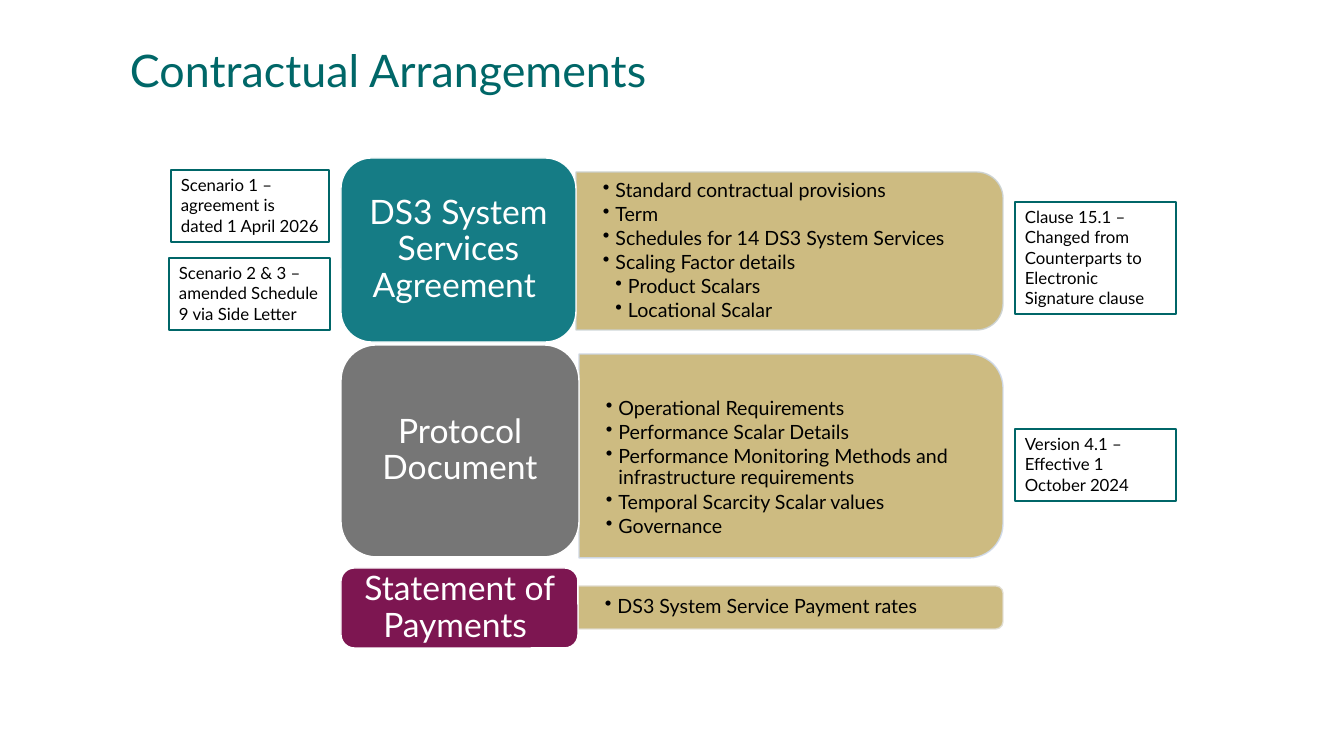
import dataclasses

import lxml.etree
import pptx
import pptx.dml.color
import pptx.enum.shapes
import pptx.enum.text
import pptx.oxml.ns
import pptx.util

PX = 9144000 / 1008
SHAPE = pptx.enum.shapes.MSO_SHAPE
ALIGN = pptx.enum.text.PP_ALIGN
ANCHOR = pptx.enum.text.MSO_ANCHOR
LABEL_LEFT = 341
PANEL_RIGHT = 1003


@dataclasses.dataclass(frozen=True)
class Theme:
    font: str = "Lato"
    title: str = "006768"
    text: str = "000000"
    paper: str = "FFFFFF"
    note_line: str = "006668"
    panel: str = "C8B474"
    agreement: str = "157C85"
    protocol: str = "767676"
    payments: str = "7D1651"
    title_size: int = 32
    label_size: int = 24
    bullet_size: int = 14
    note_size: int = 12


THEME = Theme()


def px(value):
    return pptx.util.Emu(round(value * PX))


def rgb(value):
    return pptx.dml.color.RGBColor.from_string(value)


def set_font(para, size, color):
    para.font.name = THEME.font
    para.font.size = pptx.util.Pt(size)
    para.font.color.rgb = rgb(color)


def add_box(page, kind, rect, fill, line):
    box = page.shapes.add_shape(kind, *map(px, rect))
    box.shadow.inherit = False
    box.fill.solid()
    box.fill.fore_color.rgb = rgb(fill)
    box.line.color.rgb = rgb(line)
    box.line.width = pptx.util.Pt(1)
    return box


def add_text_box(page, rect, side_inset=0):
    box = page.shapes.add_textbox(*map(px, rect))
    frame = box.text_frame
    frame.word_wrap = True
    frame.margin_left = frame.margin_right = px(side_inset)
    frame.margin_top = frame.margin_bottom = 0
    return frame


def add_title(page, text):
    para = add_text_box(page, (130, 49, 946, 106)).paragraphs[0]
    para.text = text
    para.line_spacing = 0.9
    set_font(para, THEME.title_size, THEME.title)


def add_label(page, top, width, height, text, fill):
    rect = (LABEL_LEFT, top, width, height)
    box = add_box(page, SHAPE.ROUNDED_RECTANGLE, rect, fill, THEME.paper)
    box.text_frame.vertical_anchor = ANCHOR.MIDDLE
    para = box.text_frame.paragraphs[0]
    para.text = text
    para.alignment = ALIGN.CENTER
    para.line_spacing = 0.9
    set_font(para, THEME.label_size, THEME.paper)


def add_panel(page, left, top, height, line):
    width = PANEL_RIGHT - left
    turned = (left + (width - height) / 2, top + (height - width) / 2, height, width)
    box = add_box(page, SHAPE.ROUND_2_SAME_RECTANGLE, turned, THEME.panel, line)
    box.rotation = 90
    for color in box.element.spPr.iter(pptx.oxml.ns.qn("a:srgbClr")):
        lxml.etree.SubElement(color, pptx.oxml.ns.qn("a:alpha"), val="90000")


def add_bullets(page, left, top, height, items):
    frame = add_text_box(page, (left, top, PANEL_RIGHT - left, height), 27)
    frame.vertical_anchor = ANCHOR.MIDDLE
    for index, (level, text) in enumerate(items):
        para = frame.add_paragraph() if index else frame.paragraphs[0]
        para.text = text
        para.level = level
        properties = para._p.get_or_add_pPr()
        properties.set("marL", str(px(12.5 * (level + 1))))
        properties.set("indent", str(-px(12.5)))
        lxml.etree.SubElement(properties, pptx.oxml.ns.qn("a:buChar"), char="•")
        para.line_spacing = 0.9
        para.space_after = pptx.util.Pt(2.1)
        set_font(para, THEME.bullet_size, THEME.text)


def add_note(page, rect, text):
    box = add_box(page, SHAPE.RECTANGLE, rect, THEME.paper, THEME.note_line)
    box.text_frame.vertical_anchor = ANCHOR.TOP
    para = box.text_frame.paragraphs[0]
    para.text = text
    para.alignment = ALIGN.LEFT
    set_font(para, THEME.note_size, THEME.text)


def add_row(page, label, panel, items, text_drop=0):
    top, height, text, fill = label
    panel_left, panel_top, panel_height, line = panel
    add_panel(page, panel_left, panel_top, panel_height, line)
    add_bullets(page, panel_left, panel_top + text_drop, panel_height, items)
    add_label(page, top, panel_left - LABEL_LEFT, height, text, fill)


def main():
    deck = pptx.Presentation()
    deck.slide_width, deck.slide_height = px(1344), px(756)
    page = deck.slides.add_slide(deck.slide_layouts[6])
    add_title(page, "Contractual Arrangements")
    add_row(
        page,
        (158, 184, "DS3 System Services Agreement ", THEME.agreement),
        (576, 172, 158, "CCD3D4"),
        [
            (0, "Standard contractual provisions"),
            (0, "Term"),
            (0, "Schedules for 14 DS3 System Services"),
            (0, "Scaling Factor details"),
            (1, "Product Scalars"),
            (1, "Locational Scalar"),
        ],
    )
    add_row(
        page,
        (345, 212, "Protocol Document", THEME.protocol),
        (579, 354, 204, "CFDAEB"),
        [
            (0, "Operational Requirements"),
            (0, "Performance Scalar Details"),
            (0, "Performance Monitoring Methods and infrastructure requirements"),
            (0, "Temporal Scarcity Scalar values"),
            (0, "Governance"),
        ],
        text_drop=12,
    )
    add_row(
        page,
        (568, 80, "Statement of Payments ", THEME.payments),
        (578, 586, 43, "E1DED3"),
        [(0, "DS3 System Service Payment rates")],
    )
    notes = [
        ((171, 170, 158, 72), "Scenario 1 – agreement is dated 1 April 2026"),
        ((169, 258, 161, 72), "Scenario 2 & 3 – amended Schedule 9 via Side Letter"),
        (
            (1015, 202, 161, 112),
            "Clause 15.1 – Changed from Counterparts to Electronic Signature clause",
        ),
        ((1015, 429, 161, 72), "Version 4.1 – Effective 1 October 2024"),
    ]
    for rect, text in notes:
        add_note(page, rect, text)
    deck.save("out.pptx")


if __name__ == "__main__":
    main()
